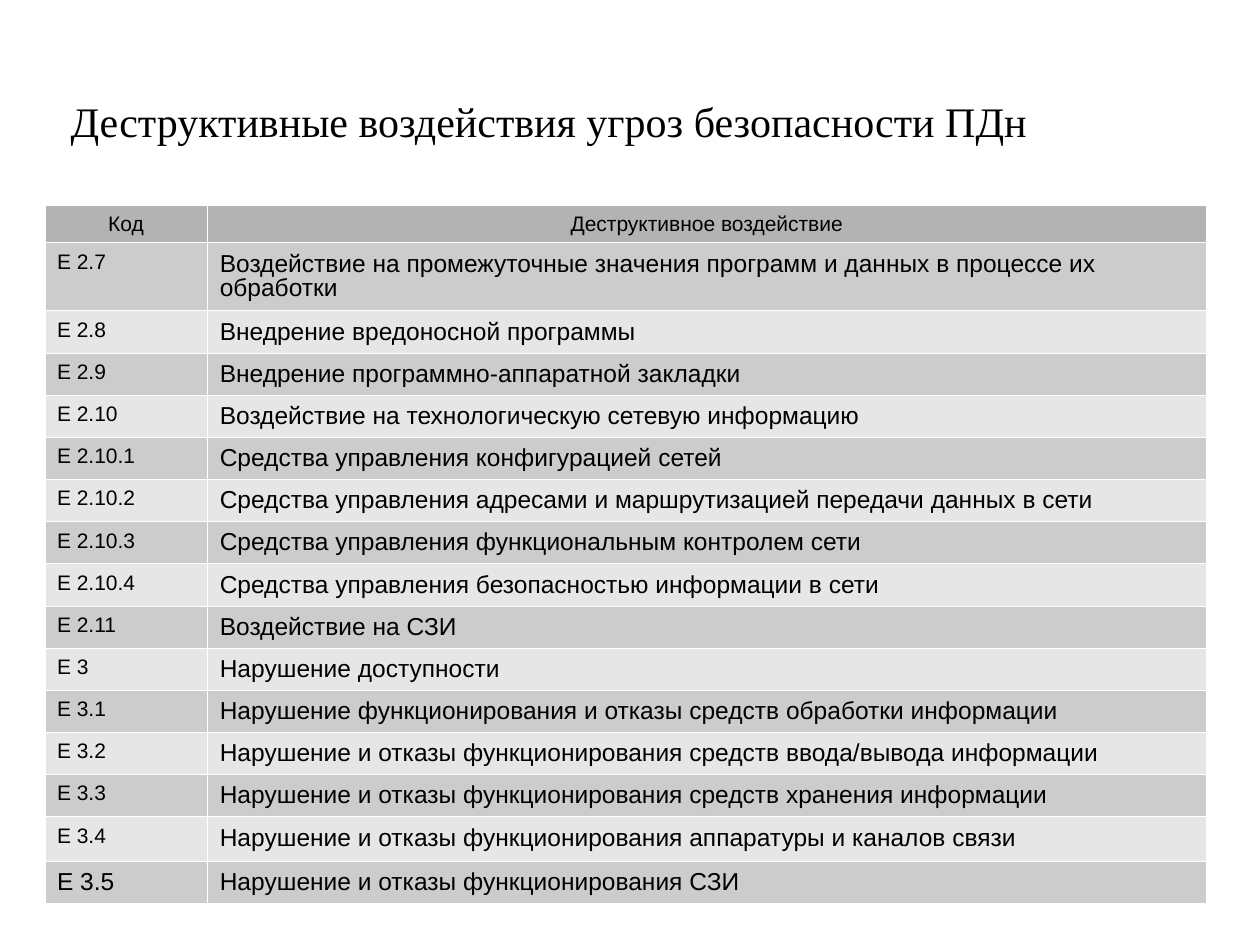
from lxml import etree
from pptx import Presentation
from pptx.dml.color import RGBColor
from pptx.enum import text as t
from pptx.oxml.ns import qn
from pptx.util import Cm, Pt

TITLE = "Деструктивные воздействия угроз безопасности ПДн"
HEAD = ("Код", "Деструктивное воздействие")
ROWS = [
    ("Е 2.7", "Воздействие на промежуточные значения программ и данных в процессе их обработки"),
    ("Е 2.8", "Внедрение вредоносной программы"),
    ("Е 2.9", "Внедрение программно-аппаратной закладки"),
    ("Е 2.10", "Воздействие на технологическую сетевую информацию"),
    ("Е 2.10.1", "Средства управления конфигурацией сетей"),
    ("Е 2.10.2", "Средства управления адресами и маршрутизацией передачи данных в сети"),
    ("Е 2.10.3", "Средства управления функциональным контролем сети"),
    ("Е 2.10.4", "Средства управления безопасностью информации в сети"),
    ("Е 2.11", "Воздействие на СЗИ"),
    ("Е 3", "Нарушение доступности"),
    ("Е 3.1", "Нарушение функционирования и отказы средств обработки информации"),
    ("Е 3.2", "Нарушение и отказы функционирования средств ввода/вывода информации"),
    ("Е 3.3", "Нарушение и отказы функционирования средств хранения информации"),
    ("Е 3.4", "Нарушение и отказы функционирования аппаратуры и каналов связи"),
    ("Е 3.5", "Нарушение и отказы функционирования СЗИ"),
]
COLORS = {"text": "000000", "head": "B3B3B3", "odd": "CCCCCC",
          "even": "E6E6E6", "line": "FFFFFF"}
WIDTHS = (3.28, 20.14)
LAST = len(ROWS)
HEIGHTS = {0: 0.76, 1: 1.37, LAST - 1: 0.89}
ROW_H = 0.85


def write(frame, words, size, font="Arial", align=t.PP_ALIGN.LEFT, space=1.0):
    frame.word_wrap = True
    par = frame.paragraphs[0]
    par.alignment = align
    par.line_spacing = space
    run = par.add_run()
    run.text = words
    run.font.size = Pt(size)
    run.font.name = font
    run.font.bold = False
    run.font.color.rgb = RGBColor.from_string(COLORS["text"])


def border(cell):
    props = cell._tc.get_or_add_tcPr()
    for i, side in enumerate(("lnL", "lnR", "lnT", "lnB")):
        line = etree.Element(qn("a:" + side), w=str(Pt(0.06)))
        fill = etree.SubElement(line, qn("a:solidFill"))
        etree.SubElement(fill, qn("a:srgbClr"), val=COLORS["line"])
        props.insert(i, line)


def add_title(slide):
    box = slide.shapes.title
    box.left, box.top, box.width, box.height = Cm(1.17), Cm(1.8), Cm(22.63), Cm(1.8)
    frame = box.text_frame
    frame.auto_size = t.MSO_AUTO_SIZE.NONE
    frame.vertical_anchor = t.MSO_ANCHOR.TOP
    write(frame, TITLE, 24, font="Times New Roman")


def add_grid(slide):
    highs = [HEIGHTS.get(i, ROW_H) for i in range(LAST + 1)]
    grid = slide.shapes.add_table(LAST + 1, len(HEAD), Cm(0.9), Cm(4.13),
                                  Cm(sum(WIDTHS)), Cm(sum(highs))).table
    for col, width in zip(grid.columns, WIDTHS):
        col.width = Cm(width)
    for r, (high, row) in enumerate(zip(highs, [HEAD] + ROWS)):
        grid.rows[r].height = Cm(high)
        shade = "head" if r == 0 else "odd" if r % 2 else "even"
        for c, words in enumerate(row):
            cell = grid.cell(r, c)
            cell.margin_left = cell.margin_right = Cm(0.25)
            cell.margin_top, cell.margin_bottom = Cm(0.2), Cm(0.13)
            cell.fill.solid()
            cell.fill.fore_color.rgb = RGBColor.from_string(COLORS[shade])
            border(cell)
            small = r == 0 or (c == 0 and r < LAST)
            write(cell.text_frame, words, 12 if small else 14, space=0.89,
                  align=t.PP_ALIGN.LEFT if r else t.PP_ALIGN.CENTER)


def main():
    deck = Presentation()
    deck.slide_width, deck.slide_height = Cm(25.4), Cm(19.05)
    slide = deck.slides.add_slide(deck.slide_layouts[5])
    add_title(slide)
    add_grid(slide)
    deck.save("out.pptx")


if __name__ == "__main__":
    main()
